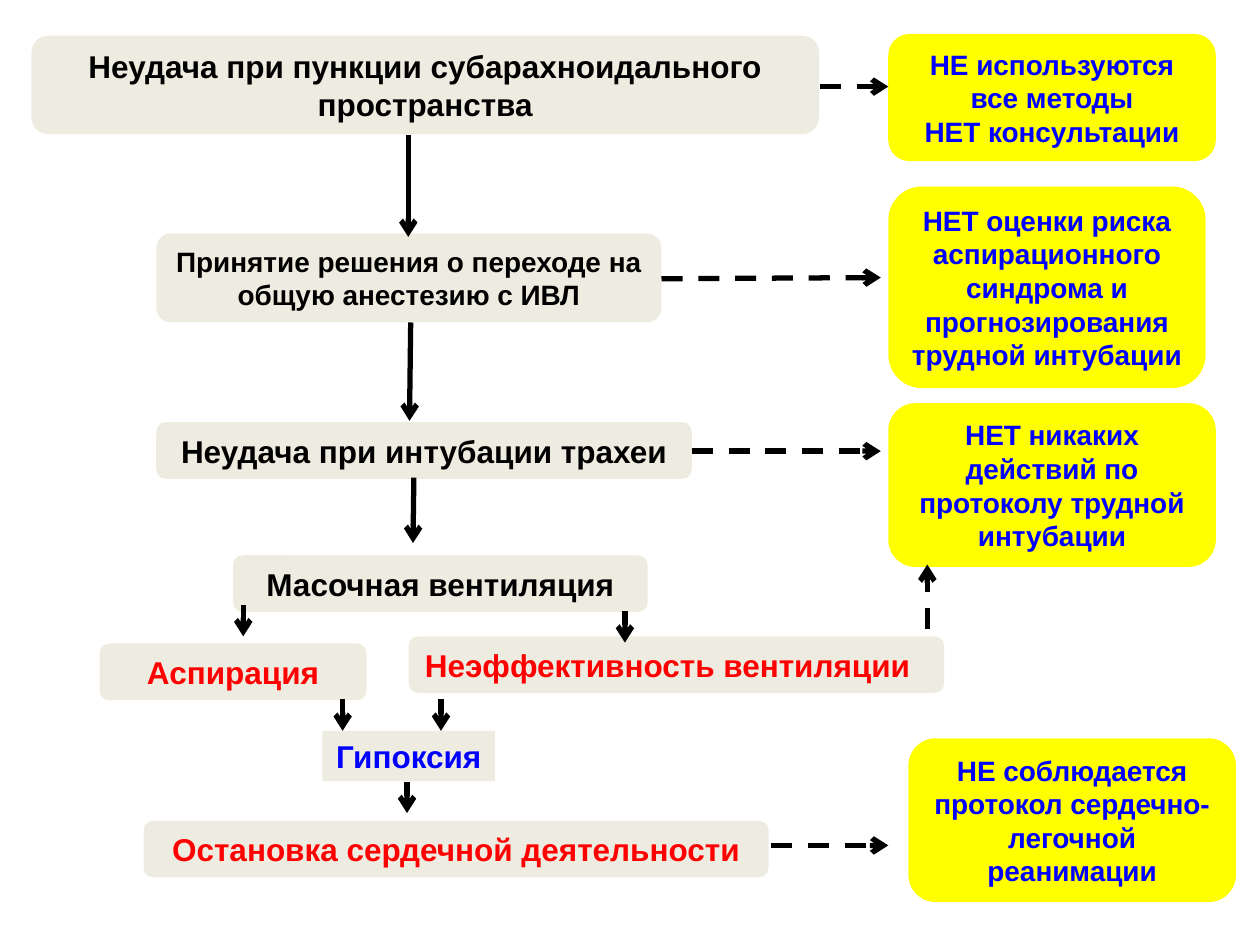
from lxml.etree import SubElement
from pptx import Presentation
from pptx.dml.color import RGBColor
from pptx.enum.dml import MSO_LINE_DASH_STYLE as Dash
from pptx.enum.shapes import MSO_CONNECTOR as Connector, MSO_SHAPE as Shape
from pptx.enum.text import MSO_ANCHOR as Anchor, MSO_AUTO_SIZE as AutoSize, PP_ALIGN as Align
from pptx.oxml.ns import qn
from pptx.util import Pt

COLORS = {"step": "EEECE1", "error": "FFFF00", "black": "000000", "red": "FF0000", "blue": "0000FF"}
FONT = "Arial"
ROW_HEIGHT = 32.4
ERROR_LEFT, ERROR_WIDTH = 507.6, 187.2

STEPS = [
    ("Неудача при пункции субарахноидального пространства", 18, 20.4, 450, 56.2, "black"),
    ("Принятие решения о переходе на общую анестезию с ИВЛ", 89.3, 133.4, 288.7, 50.9, "black"),
    ("Неудача при интубации трахеи", 89.3, 241.2, 306, ROW_HEIGHT, "black"),
    ("Масочная вентиляция", 133.2, 317.3, 236.9, ROW_HEIGHT, "black"),
    ("Аспирация", 56.9, 367.7, 152.6, ROW_HEIGHT, "red"),
    ("Неэффективность вентиляции", 233.5, 363.6, 306, ROW_HEIGHT, "red"),
    ("Гипоксия", 184.3, 417.6, 98.6, 28.8, "blue"),
    ("Остановка сердечной деятельности", 82.1, 469, 357.1, ROW_HEIGHT, "red"),
]
SMALL_STEP, OFFSET_STEP, PLAIN_STEP = STEPS[1][0], STEPS[5][0], STEPS[6][0]

ERRORS = [
    ("НЕ используются все методы\nНЕТ консультации", ERROR_LEFT, 19.4, ERROR_WIDTH, 72.7),
    ("НЕТ оценки риска аспирационного синдрома и прогнозирования трудной интубации",
     ERROR_LEFT, 106.6, 181.4, 115.2),
    ("НЕТ никаких действий по протоколу трудной интубации", ERROR_LEFT, 230.4, ERROR_WIDTH, 93.6),
    ("НЕ соблюдается протокол сердечно-легочной реанимации", 519.1, 421.9, ERROR_WIDTH, 93.6),
]

STEP_ARROWS = [
    (233.3, 77, 233.3, 135.4),
    (234.7, 184.3, 234, 240.5),
    (236.5, 272.9, 236, 310.3),
    (139, 345.6, 139, 363.6),
    (357.1, 349.2, 357.1, 367.2),
    (195.8, 399.6, 195.8, 417.6),
    (252, 399.6, 252, 417.6),
    (232.6, 446.8, 232.6, 464.6),
]
ERROR_ARROWS = [
    (468.7, 49.5, 507.6, 49.5),
    (378, 159.3, 503.3, 158.6),
    (395.3, 257.8, 503.3, 257.8),
    (529.9, 359.3, 529.9, 322.6),
    (440.6, 483.1, 507.6, 483.1),
]


def color(name):
    return RGBColor.from_string(COLORS[name])


def add_box(slide, text, left, top, width, height, fill, text_color, size, kind=Shape.ROUNDED_RECTANGLE):
    box = slide.shapes.add_shape(kind, Pt(left), Pt(top), Pt(width), Pt(height))
    box.shadow.inherit = False
    box.fill.solid()
    box.fill.fore_color.rgb = color(fill)
    box.line.fill.background()
    frame = box.text_frame
    frame.text = text
    frame.word_wrap = kind != Shape.RECTANGLE
    frame.auto_size = AutoSize.SHAPE_TO_FIT_TEXT
    frame.vertical_anchor = Anchor.MIDDLE
    for paragraph in frame.paragraphs:
        paragraph.alignment = Align.CENTER
        font = paragraph.font
        font.name, font.size, font.bold = FONT, Pt(size), True
        font.color.rgb = color(text_color)
    return box


def add_arrow(slide, points, dashed):
    arrow = slide.shapes.add_connector(Connector.STRAIGHT, *map(Pt, points))
    arrow.line.width = Pt(3)
    arrow.line.color.rgb = color("black")
    if dashed:
        arrow.line.dash_style = Dash.DASH
    properties = arrow.line._get_or_add_ln()
    SubElement(properties, qn("a:tailEnd"), type="arrow")
    SubElement(arrow._element.spPr, qn("a:effectLst"))


def main():
    presentation = Presentation()
    presentation.slide_width, presentation.slide_height = Pt(720), Pt(540)
    slide = presentation.slides.add_slide(presentation.slide_layouts[6])
    for text, *place, text_color in STEPS:
        size = 16 if text == SMALL_STEP else 18
        kind = Shape.RECTANGLE if text == PLAIN_STEP else Shape.ROUNDED_RECTANGLE
        box = add_box(slide, text, *place, "step", text_color, size, kind)
        if text == OFFSET_STEP:
            box.text_frame.margin_left, box.text_frame.margin_right = Pt(2), Pt(12)
    for text, *place in ERRORS:
        add_box(slide, text, *place, "error", "blue", 16)
    for arrows, dashed in ((STEP_ARROWS, False), (ERROR_ARROWS, True)):
        for points in arrows:
            add_arrow(slide, points, dashed)
    presentation.save("out.pptx")


if __name__ == "__main__":
    main()
